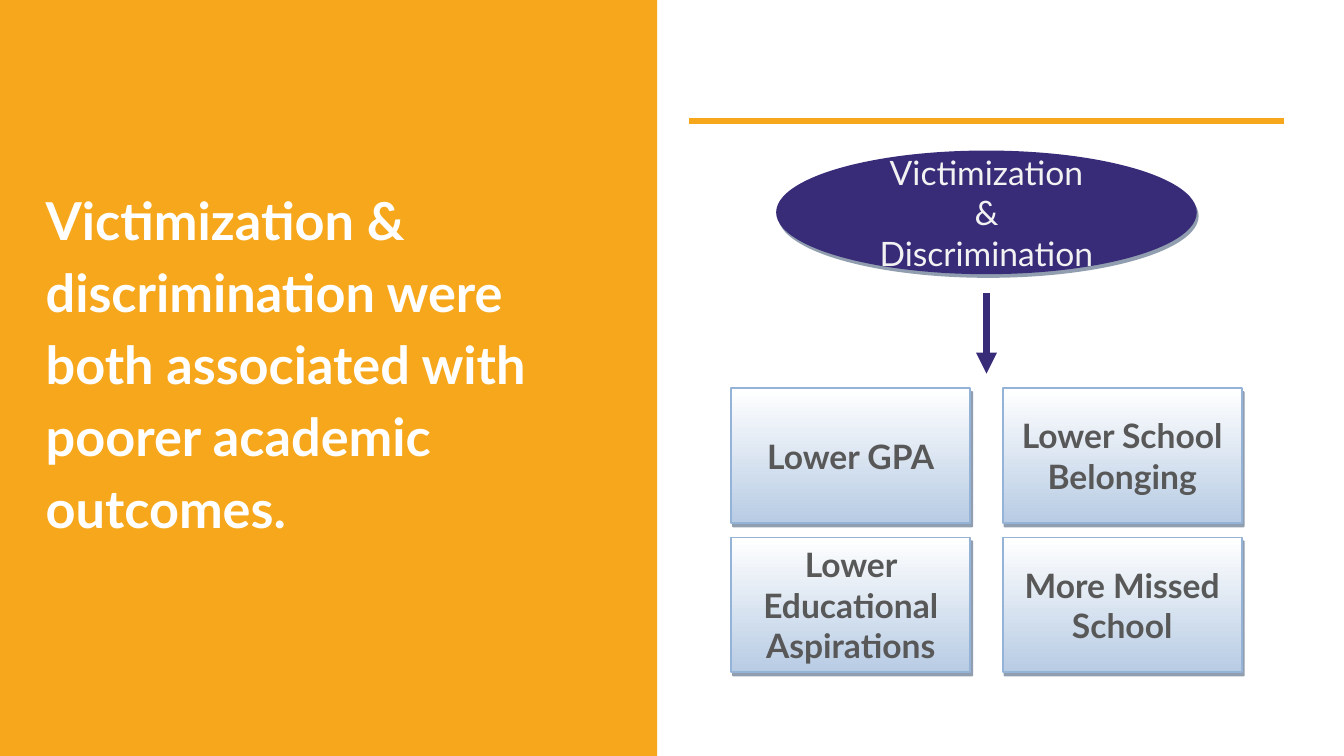
from lxml import etree
from pptx import Presentation
from pptx.dml.color import RGBColor
from pptx.enum.shapes import MSO_CONNECTOR as Connector, MSO_SHAPE as Preset
from pptx.enum.text import MSO_ANCHOR as Anchor, MSO_AUTO_SIZE as AutoSize, PP_ALIGN as Align
from pptx.oxml.ns import qn
from pptx.util import Inches, Pt

SLIDE_WIDTH = 10
SLIDE_HEIGHT = SLIDE_WIDTH * 9 / 16
FONT = "Lato"
ORANGE, PURPLE, WHITE = "F6A71B", "382C79", "FFFFFF"
PALE_BLUE, BORDER_BLUE, SHADOW_BLUE = "B8CCE4", "95B3D7", "243F60"
GREY, OFF_WHITE = "585858", "F2F2F2"


def color(hex_string):
    return RGBColor.from_string(hex_string)


def add_shape(slide, preset, left, top, width, height, fill=None):
    shape = slide.shapes.add_shape(
        preset, Inches(left), Inches(top), Inches(width), Inches(height))
    shape.shadow.inherit = False
    shape.line.fill.background()
    if fill:
        shape.fill.solid()
        shape.fill.fore_color.rgb = color(fill)
    return shape


def add_line(slide, x1, y1, x2, y2, line_color, weight):
    line = slide.shapes.add_connector(
        Connector.STRAIGHT, Inches(x1), Inches(y1), Inches(x2), Inches(y2))
    line.line.color.rgb = color(line_color)
    line.line.width = Pt(weight)
    etree.SubElement(line.element.spPr, qn("a:effectLst"))
    return line


def set_shadow(shape):
    effects = shape.element.spPr.find(qn("a:effectLst"))
    shadow = etree.SubElement(effects, qn("a:outerShdw"), dist=str(Pt(2.2)),
                              dir=str(63 * 60000), algn="ctr", rotWithShape="0")
    tint = etree.SubElement(shadow, qn("a:srgbClr"), val=SHADOW_BLUE)
    etree.SubElement(tint, qn("a:alpha"), val="50000")


def set_text(shape, text, size, text_color, bold=False, align=Align.CENTER,
             anchor=Anchor.MIDDLE):
    frame = shape.text_frame
    frame.text = text
    frame.word_wrap = True
    frame.vertical_anchor = anchor
    for paragraph in frame.paragraphs:
        paragraph.alignment = align
        for run in paragraph.runs:
            run.font.name = FONT
            run.font.size = Pt(size)
            run.font.bold = bold
            run.font.color.rgb = color(text_color)


def add_statement(slide, left, top, width, height):
    # Orange panel, placed behind the title
    panel = add_shape(slide, Preset.RECTANGLE, left, top, width, height, ORANGE)
    title = slide.shapes.title
    title.element.addprevious(panel.element)

    # Statement text
    title.left, title.top = Inches(left + 0.24), Inches(top + 1.23)
    title.width, title.height = Inches(4.42), Inches(3.84)
    set_text(title, "Victimization & discrimination were both associated with "
             "poorer academic outcomes.", 28, WHITE, True, Align.LEFT, Anchor.TOP)
    frame = title.text_frame
    frame.auto_size = AutoSize.NONE
    frame.margin_left = frame.margin_right = Inches(0.1)
    frame.margin_top = frame.margin_bottom = Inches(0.1)
    paragraph = frame.paragraphs[0]
    paragraph.line_spacing = 1.15
    paragraph.space_before = Pt(0)
    paragraph.space_after = Pt(16)


def add_outcome(slide, left, top, width, height, text):
    box = add_shape(slide, Preset.RECTANGLE, left, top, width, height)
    box.fill.gradient()
    box.fill.gradient_angle = 270
    for stop, position, tint in zip(box.fill.gradient_stops, (0, 1), (WHITE, PALE_BLUE)):
        stop.position = position
        stop.color.rgb = color(tint)
    box.line.color.rgb = color(BORDER_BLUE)
    box.line.width = Pt(1)
    set_shadow(box)
    set_text(box, text, 18, GREY, True)


def add_diagram(slide, left, top, width):
    center = left + width / 2

    # Rule above the diagram
    add_line(slide, left, top, left + width, top, ORANGE, 3)

    # Cause
    cause_width = 3.13
    cause = add_shape(slide, Preset.OVAL, center - cause_width / 2, top + 0.22,
                      cause_width, 0.92, PURPLE)
    set_shadow(cause)
    set_text(cause, "Victimization\n&\nDiscrimination", 18, OFF_WHITE)

    # Arrow from cause to outcomes
    arrow = add_line(slide, center, top + 1.28, center, top + 1.88, PURPLE, 3.75)
    outline = arrow.element.spPr.find(qn("a:ln"))
    etree.SubElement(outline, qn("a:tailEnd"), type="triangle")

    # Grid of outcomes
    outcomes = [["Lower GPA", "Lower School Belonging"],
                ["Lower Educational Aspirations", "More Missed School"]]
    box_width, box_height, column_gap, row_gap = 1.78, 1, 0.24, 0.11
    grid_left = center - box_width - column_gap / 2
    for row, texts in enumerate(outcomes):
        for column, text in enumerate(texts):
            add_outcome(slide, grid_left + column * (box_width + column_gap),
                        top + 1.99 + row * (box_height + row_gap),
                        box_width, box_height, text)


def main():
    presentation = Presentation()
    presentation.slide_width = Inches(SLIDE_WIDTH)
    presentation.slide_height = Inches(SLIDE_HEIGHT)
    slide = presentation.slides.add_slide(presentation.slide_layouts[5])
    add_statement(slide, 0, 0, 4.89, SLIDE_HEIGHT)
    add_diagram(slide, 5.13, 0.9, 4.42)
    presentation.save("out.pptx")


if __name__ == "__main__":
    main()
